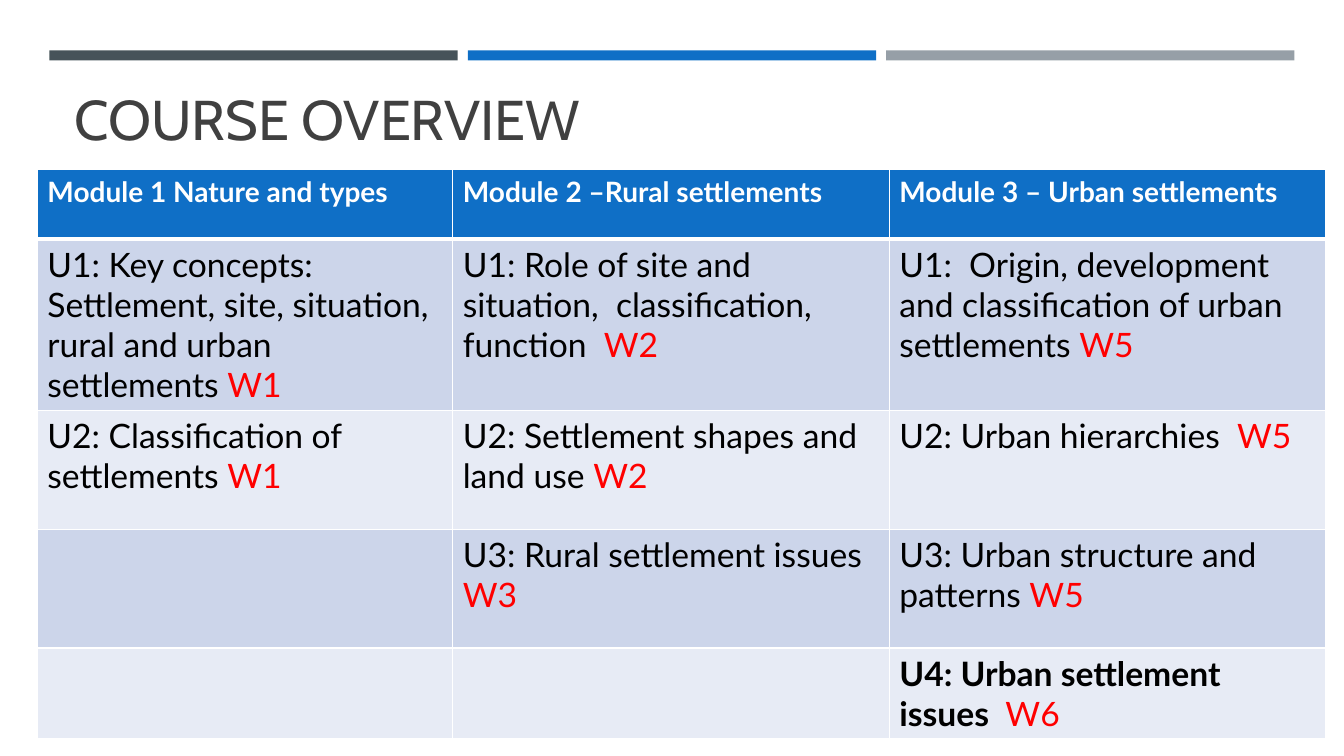
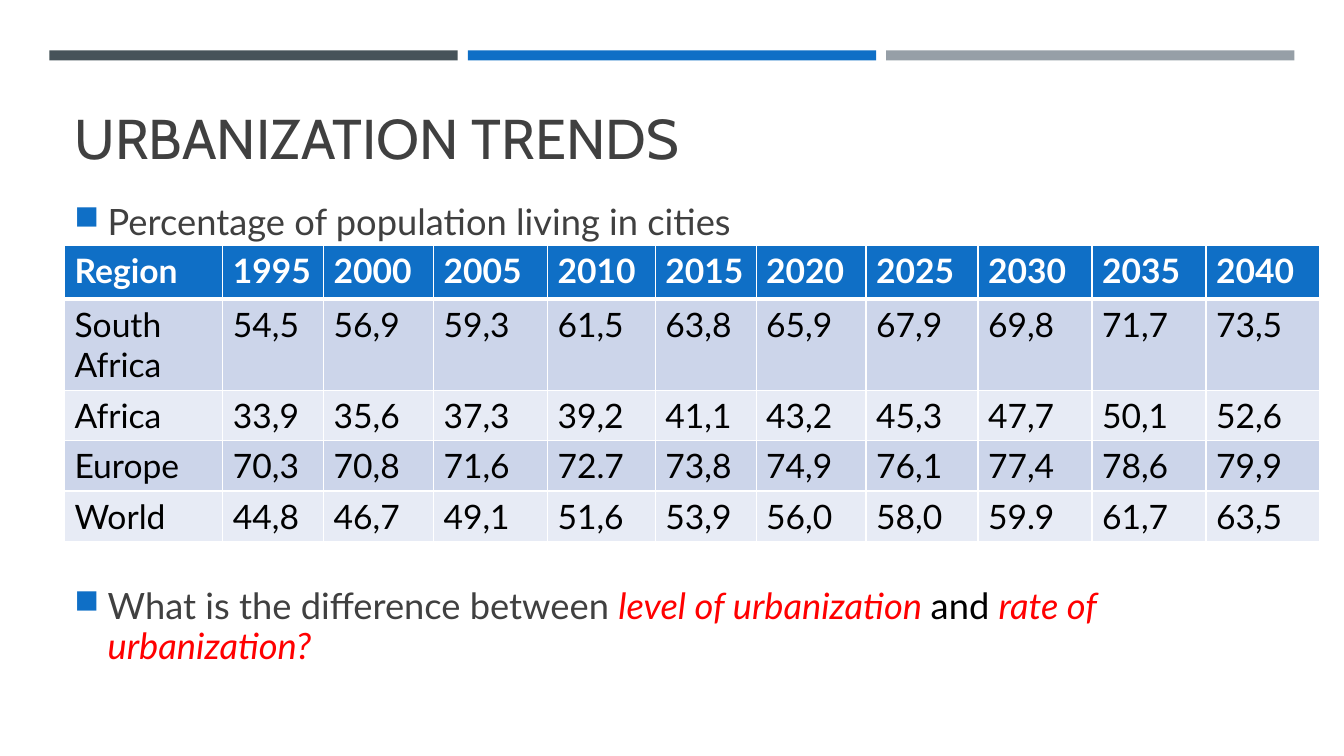
from dataclasses import dataclass

from lxml.etree import SubElement as Sub
from pptx import Presentation
from pptx.dml.color import RGBColor as Rgb
from pptx.enum.shapes import MSO_SHAPE as Shape
from pptx.enum.text import MSO_ANCHOR as Anchor, MSO_AUTO_SIZE as Fit, PP_ALIGN as Align
from pptx.oxml.ns import qn
from pptx.util import Inches, Pt


@dataclass(frozen=True)
class Theme:
    # Colours
    slate: str = "465359"
    blue: str = "0F6FC6"
    grey: str = "969FA7"
    ink: str = "404040"
    black: str = "000000"
    white: str = "FFFFFF"
    red: str = "FF0000"
    odd: str = "CCD5EA"
    even: str = "E7EBF5"
    # Fonts and type sizes
    head: str = "Cabin"
    body: str = "Lato"
    title: float = 40
    point: float = 25.9
    cell: float = 24
    label: float = 20
    # Border widths
    thin: float = 1
    thick: float = 3


T = Theme()
WIDE, HIGH = Inches(13.33), Inches(7.5)
LEFT, SPAN = 4.8, 90.47  # text column, in percent of the slide width


# Lengths are percentages of the slide's width and height
def across(share):
    return round(WIDE * share / 100)


def down(share):
    return round(HIGH * share / 100)


def area(x, y, w, h):
    return across(x), down(y), across(w), down(h)


def write(para, text, size=T.cell, color=T.black, font=T.body, bold=False, italic=False):
    run = para.add_run()
    run.text = text
    face = run.font
    face.name, face.size, face.bold, face.italic = font, Pt(size), bold, italic
    face.color.rgb = Rgb.from_string(color)


# Slide frame: three bands and the title
def bands(slide):
    width, gap = 30.38, 0.75
    for i, color in enumerate((T.slate, T.blue, T.grey)):
        x = 3.68 + i * (width + gap)
        band = slide.shapes.add_shape(Shape.RECTANGLE, *area(x, 6.67, width, 1.33))
        band.shadow.inherit = False
        band.fill.solid()
        band.fill.fore_color.rgb = Rgb.from_string(color)
        band.line.fill.background()


def start(deck, text, top, height):
    slide = deck.slides.add_slide(deck.slide_layouts[5])
    bands(slide)
    title = slide.shapes.title
    title.left, title.top, title.width, title.height = area(LEFT, top, SPAN, height)
    frame = title.text_frame
    frame.auto_size, frame.vertical_anchor = Fit.NONE, Anchor.BOTTOM
    para = frame.paragraphs[0]
    para.alignment = Align.LEFT
    write(para, text, size=T.title, color=T.ink, font=T.head)
    return slide


# Bulleted text: each run is a text and its format
def bullet(slide, top, height, *runs):
    frame = slide.shapes.add_textbox(*area(LEFT, top, SPAN, height)).text_frame
    frame.word_wrap = True
    para = frame.paragraphs[0]
    props = para._p.get_or_add_pPr()
    indent = Inches(0.33)
    props.set("marL", str(indent))
    props.set("indent", str(-indent))
    Sub(Sub(props, qn("a:buClr")), qn("a:srgbClr"), val=T.blue)
    Sub(props, qn("a:buSzPct"), val="92000")
    Sub(props, qn("a:buChar"), char="■")
    para.line_spacing = 0.9
    for text, form in runs:
        write(para, text, **{"size": T.point, "color": T.ink, **form})


# Tables: a cell is a list of runs
def border(cell, row):
    props = cell._tc.get_or_add_tcPr()
    top = T.thick if row == 1 else T.thin
    base = T.thick if row == 0 else T.thin
    for side, width in (("L", T.thin), ("R", T.thin), ("T", top), ("B", base)):
        line = Sub(props, qn(f"a:ln{side}"), w=str(Pt(width)))
        Sub(Sub(line, qn("a:solidFill")), qn("a:srgbClr"), val=T.white)


def grid(slide, x, y, cols, rows, cells, size=T.cell):
    box = area(x, y, sum(cols), sum(rows))
    table = slide.shapes.add_table(len(rows), len(cols), *box).table
    table.horz_banding = False
    for col, share in zip(table.columns, cols):
        col.width = across(share)
    for row, share in zip(table.rows, rows):
        row.height = down(share)
    for r, line in enumerate(cells):
        tint = T.blue if r == 0 else (T.even, T.odd)[r % 2]
        base = {"size": size, "color": T.white, "bold": True} if r == 0 else {}
        for c, runs in enumerate(line):
            cell = table.cell(r, c)
            border(cell, r)
            cell.fill.solid()
            cell.fill.fore_color.rgb = Rgb.from_string(tint)
            for text, form in runs:
                write(cell.text_frame.paragraphs[0], text, **{**base, **form})


def plain(text):
    return [(text, {})]


def unit(text, week, **form):
    return [(text, form), (week, {"color": T.red})]


def course(deck):
    slide = start(deck, "COURSE OVERVIEW", 8.67, 12)
    heads = ("Module 1 Nature and types", "Module 2 –Rural settlements",
             "Module 3 – Urban settlements")
    cells = [
        [plain(head) for head in heads],
        [unit("U1: Key concepts: Settlement, site, situation, "
              "rural and urban settlements ", "W1"),
         unit("U1: Role of site and situation,  classification, function  ", "W2"),
         unit("U1:  Origin, development and classification of urban settlements ", "W5")],
        [unit("U2: Classification of settlements ", "W1"),
         unit("U2: Settlement shapes and land use ", "W2"),
         unit("U2: Urban hierarchies  ", "W5")],
        [[],
         unit("U3: Rural settlement issues ", "W3"),
         unit("U3: Urban structure and patterns ", "W5")],
        [[], [], unit("U4: Urban settlement issues  ", "W6", bold=True)],
    ]
    grid(slide, 2.78, 22.4, (30.91, 32.48, 32.48), (9.2, 22.53, 15.73, 15.73, 12),
         cells, size=T.label)


def trends(deck):
    slide = start(deck, "URBANIZATION TRENDS", 10.53, 12.67)
    bullet(slide, 26.4, 6.67, ("Percentage of population living in cities", {}))
    key = {"color": T.red, "italic": True}
    bullet(slide, 77.2, 12,
           ("What is the difference between ", {}),
           ("level of urbanization ", key),
           ("and ", {"color": T.black}),
           ("rate of urbanization?", key))
    data = [
        ("Region", [str(year) for year in range(1995, 2041, 5)]),
        ("South Africa", "54,5 56,9 59,3 61,5 63,8 65,9 67,9 69,8 71,7 73,5".split()),
        ("Africa", "33,9 35,6 37,3 39,2 41,1 43,2 45,3 47,7 50,1 52,6".split()),
        ("Europe", "70,3 70,8 71,6 72.7 73,8 74,9 76,1 77,4 78,6 79,9".split()),
        ("World", "44,8 46,7 49,1 51,6 53,9 56,0 58,0 59.9 61,7 63,5".split()),
    ]
    cells = [[plain(text) for text in (name, *rates)] for name, rates in data]
    cols = (11.78, 7.5, 8.18, 8.48, 8.03, 7.5, 8.18, 8.33, 8.48, 8.48, 8.48)
    grid(slide, LEFT, 32.4, cols, (7.2, 11.87, 6.67, 6.67, 6.67), cells)


def main():
    deck = Presentation()
    deck.slide_width, deck.slide_height = WIDE, HIGH
    course(deck)
    trends(deck)
    deck.save("out.pptx")


if __name__ == "__main__":
    main()
